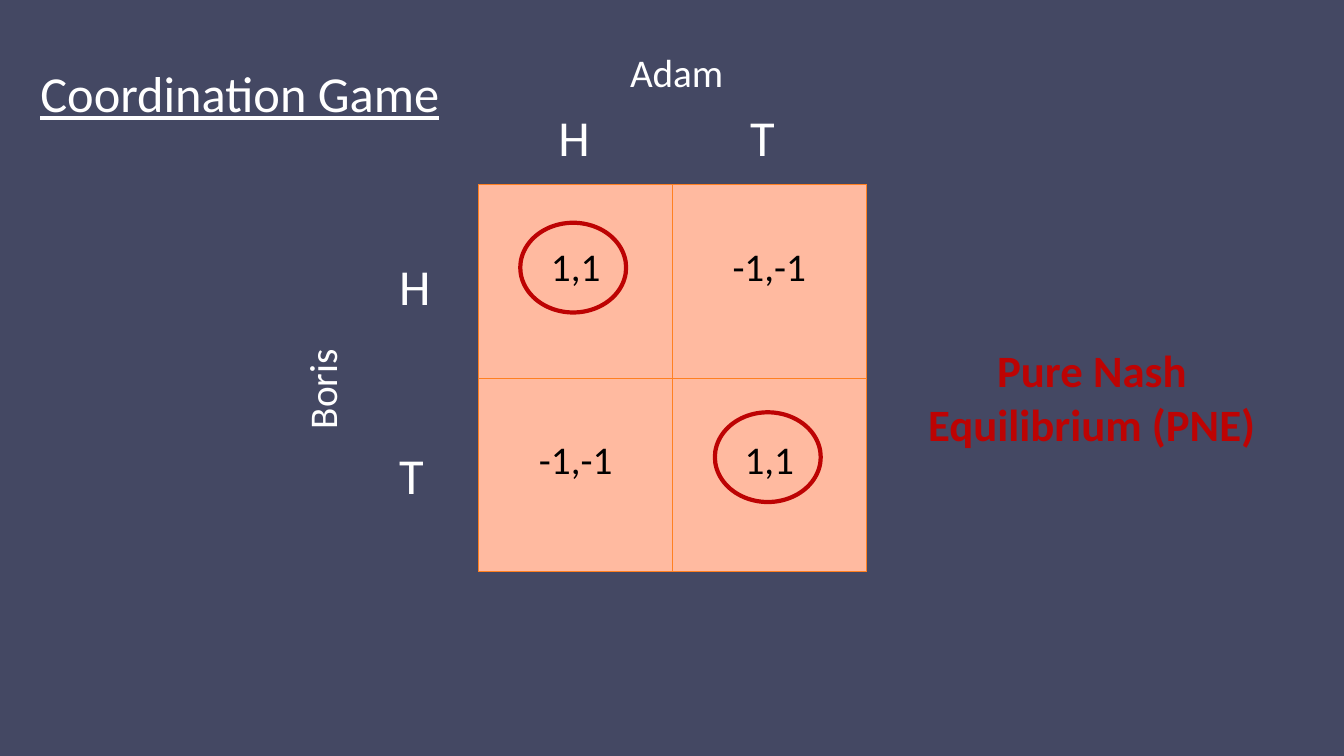
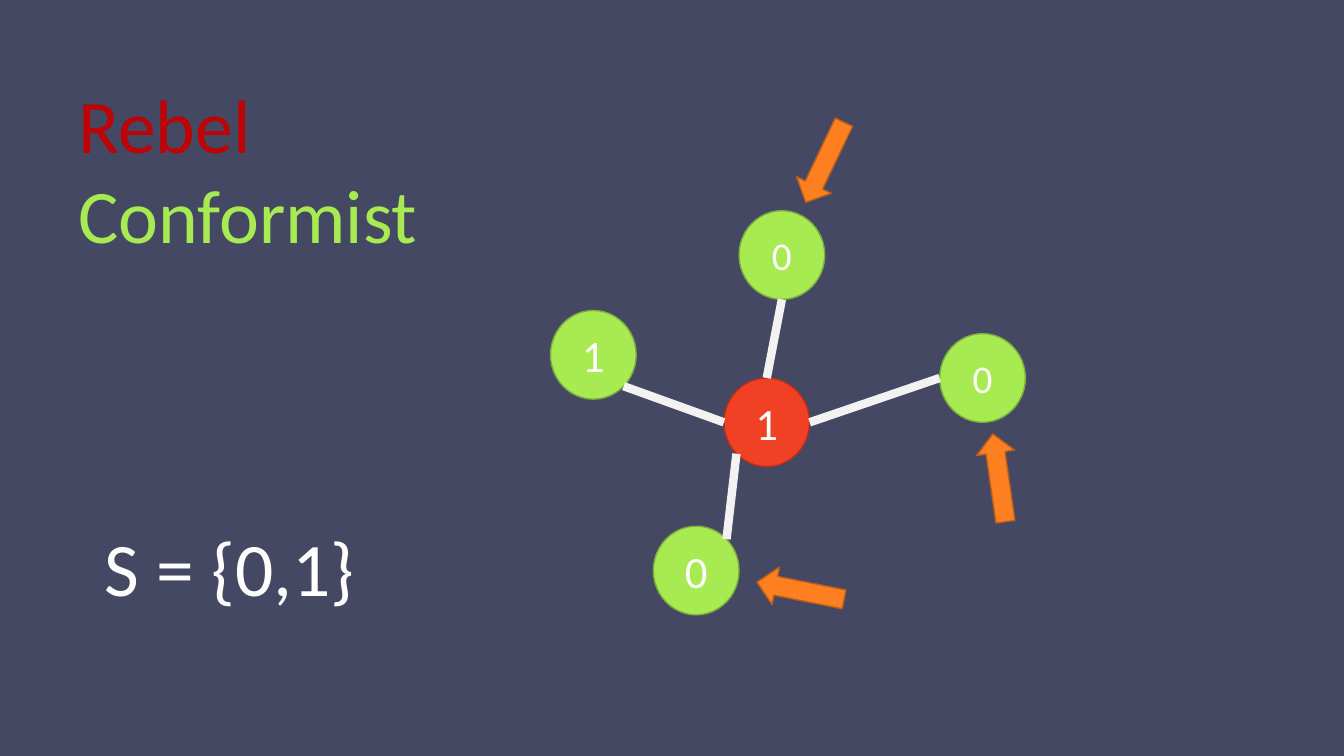
from dataclasses import dataclass
from math import cos, radians, sin

from lxml.etree import SubElement
from pptx import Presentation
from pptx.dml.color import RGBColor
from pptx.enum.shapes import MSO_CONNECTOR, MSO_SHAPE
from pptx.enum.text import MSO_ANCHOR, MSO_AUTO_SIZE, PP_ALIGN
from pptx.oxml.ns import qn
from pptx.util import Inches, Pt


@dataclass(frozen=True)
class Theme:
    font: str = "Calibri"
    back: str = "444863"
    white: str = "FFFFFF"
    black: str = "000000"
    red: str = "BD0303"
    green: str = "A7EA52"
    moss: str = "7CAD3D"
    hub: str = "F14124"
    rust: str = "B2301B"
    orange: str = "FF8021"
    brown: str = "BD5F18"
    peach: str = "FFBAA0"
    edge: str = "F2F2F2"
    small: int = 28
    medium: int = 32
    large: int = 36
    huge: int = 54


THEME = Theme()
NODE = (0.85, 0.88)
ARROW = (0.38, 0.88)


def rgb(code):
    return RGBColor.from_string(code)


def style(para, size, color=THEME.white, align=PP_ALIGN.LEFT, bold=False):
    para.alignment = align
    font = para.font
    font.name, font.size, font.bold = THEME.font, Pt(size), bold
    font.color.rgb = rgb(color)


def label(slide, box, lines, size, turn=0, **look):
    """Add a text box; lines holds (text, color) pairs."""
    shape = slide.shapes.add_textbox(*map(Inches, box))
    shape.rotation = turn
    frame = shape.text_frame
    frame.word_wrap = True
    frame.auto_size = MSO_AUTO_SIZE.SHAPE_TO_FIT_TEXT
    frame.text = "\n".join(text for text, _ in lines)
    for para, (_, color) in zip(frame.paragraphs, lines):
        style(para, size, color, **look)


def heading(slide, box, text):
    title = slide.shapes.title
    title.left, title.top, title.width, title.height = map(Inches, box)
    frame = title.text_frame
    frame.text = text
    frame.word_wrap = False
    frame.auto_size = MSO_AUTO_SIZE.SHAPE_TO_FIT_TEXT
    frame.vertical_anchor = MSO_ANCHOR.TOP
    para = frame.paragraphs[0]
    style(para, THEME.large)
    para.font.underline = True


def figure(slide, kind, box, fill, line, width=1, turn=0):
    shape = slide.shapes.add_shape(kind, *map(Inches, box))
    shape.shadow.inherit = False
    shape.rotation = turn
    if fill:
        shape.fill.solid()
        shape.fill.fore_color.rgb = rgb(fill)
    else:
        shape.fill.background()
    shape.line.color.rgb = rgb(line)
    shape.line.width = Pt(width)
    return shape


def node(slide, spot, text, size, fill=THEME.green, line=THEME.moss):
    shape = figure(slide, MSO_SHAPE.OVAL, (*spot, *NODE), fill, line)
    frame = shape.text_frame
    frame.text = text
    frame.vertical_anchor = MSO_ANCHOR.MIDDLE
    style(frame.paragraphs[0], size, align=PP_ALIGN.CENTER)


def rim(spot, angle):
    """Point on a node's outline, clockwise from the right."""
    turn = radians(angle)
    return (Inches(spot[0] + NODE[0] / 2 * (1 + cos(turn))),
            Inches(spot[1] + NODE[1] / 2 * (1 + sin(turn))))


def link(slide, start, end):
    line = slide.shapes.add_connector(MSO_CONNECTOR.STRAIGHT, *start, *end)
    line.line.color.rgb = rgb(THEME.edge)
    line.line.width = Pt(6)
    SubElement(line._element.spPr, qn("a:effectLst"))


def border(cell):
    props = cell._tc.get_or_add_tcPr()
    for index, side in enumerate(("lnL", "lnR", "lnT", "lnB")):
        line = props.makeelement(qn(f"a:{side}"), {"w": str(Pt(0.75))})
        fill = SubElement(line, qn("a:solidFill"))
        SubElement(fill, qn("a:srgbClr"), val=THEME.orange)
        props.insert(index, line)


def matrix(slide, left, top, side, rows):
    count = len(rows)
    size = Inches(side * count)
    table = slide.shapes.add_table(count, count, Inches(left), Inches(top),
                                   size, size).table
    table.first_row = table.horz_banding = False
    for r, row in enumerate(rows):
        table.rows[r].height = table.columns[r].width = Inches(side)
        for c, text in enumerate(row):
            cell = table.cell(r, c)
            cell.text = text
            cell.margin_left = cell.margin_right = Inches(0.24)
            cell.margin_top, cell.margin_bottom = Inches(0.59), Inches(0.12)
            cell.fill.solid()
            cell.fill.fore_color.rgb = rgb(THEME.peach)
            border(cell)
            style(cell.text_frame.paragraphs[0], THEME.small, THEME.black,
                  PP_ALIGN.CENTER)


def game(deck):
    slide = deck.slides.add_slide(deck.slide_layouts[5])
    heading(slide, (0.3, 0.57, 4.16, 0.71), "Coordination Game")
    matrix(slide, 4.75, 1.83, 1.92, [("1,1", "-1,-1"), ("-1,-1", "1,1")])

    # Moves and players
    for i, move in enumerate("HT"):
        for spot in ((3.86, 2.48 + 1.88 * i), (5.44 + 1.9 * i, 1)):
            label(slide, (*spot, 0.55, 0.71), [(move, THEME.white)],
                  THEME.large)
    label(slide, (6.15, 0.43, 2.78, 0.57), [("Adam", THEME.white)],
          THEME.small)
    label(slide, (1.8, 2.68, 2.78, 0.57), [("Boris", THEME.white)],
          THEME.small, turn=270)

    # Equilibria
    for spot in ((5.16, 2.21), (7.09, 4.09)):
        figure(slide, MSO_SHAPE.OVAL, (*spot, 1.05, 0.89), None, THEME.red, 3)
    label(slide, (8.71, 3.35, 4.24, 1.18),
          [("Pure Nash Equilibrium (PNE)", THEME.red)], THEME.medium,
          align=PP_ALIGN.CENTER, bold=True)


def network(deck):
    slide = deck.slides.add_slide(deck.slide_layouts[6])
    label(slide, (0.68, 0.72, 3.65, 1.92),
          [("Rebel", THEME.red), ("Conformist", THEME.green)], THEME.huge)

    # Nodes
    hub, west, south, north, east = (
        (7.18, 3.75), (5.46, 3.08), (6.48, 5.22), (7.33, 2.09), (9.32, 3.31))
    for spot, text, size in ((west, "1", THEME.medium),
                             (south, "0", THEME.medium),
                             (north, "0", THEME.small),
                             (east, "0", THEME.small)):
        node(slide, spot, text, size)
    node(slide, hub, "1", THEME.medium, THEME.hub, THEME.rust)

    # Links from the hub, with the angle at each end
    for angle, spot, far in ((180, west, 45), (135, south, -45),
                             (0, east, 180), (-90, north, 90)):
        link(slide, rim(hub, angle), rim(spot, far))

    label(slide, (0.94, 5.12, 3.28, 1.01), [("S = {0,1}", THEME.white)],
          THEME.huge)

    # Arrows
    for spot, turn in (((7.99, 1.17), 205.5), ((9.72, 4.3), 351.8),
                       ((7.75, 5.42), 281.2)):
        figure(slide, MSO_SHAPE.UP_ARROW, (*spot, *ARROW), THEME.orange,
               THEME.brown, turn=turn)


def main():
    deck = Presentation()
    deck.slide_width, deck.slide_height = Inches(13.33), Inches(7.5)
    fill = deck.slide_master.background.fill
    fill.solid()
    fill.fore_color.rgb = rgb(THEME.back)
    game(deck)
    network(deck)
    deck.save("out.pptx")


if __name__ == "__main__":
    main()
